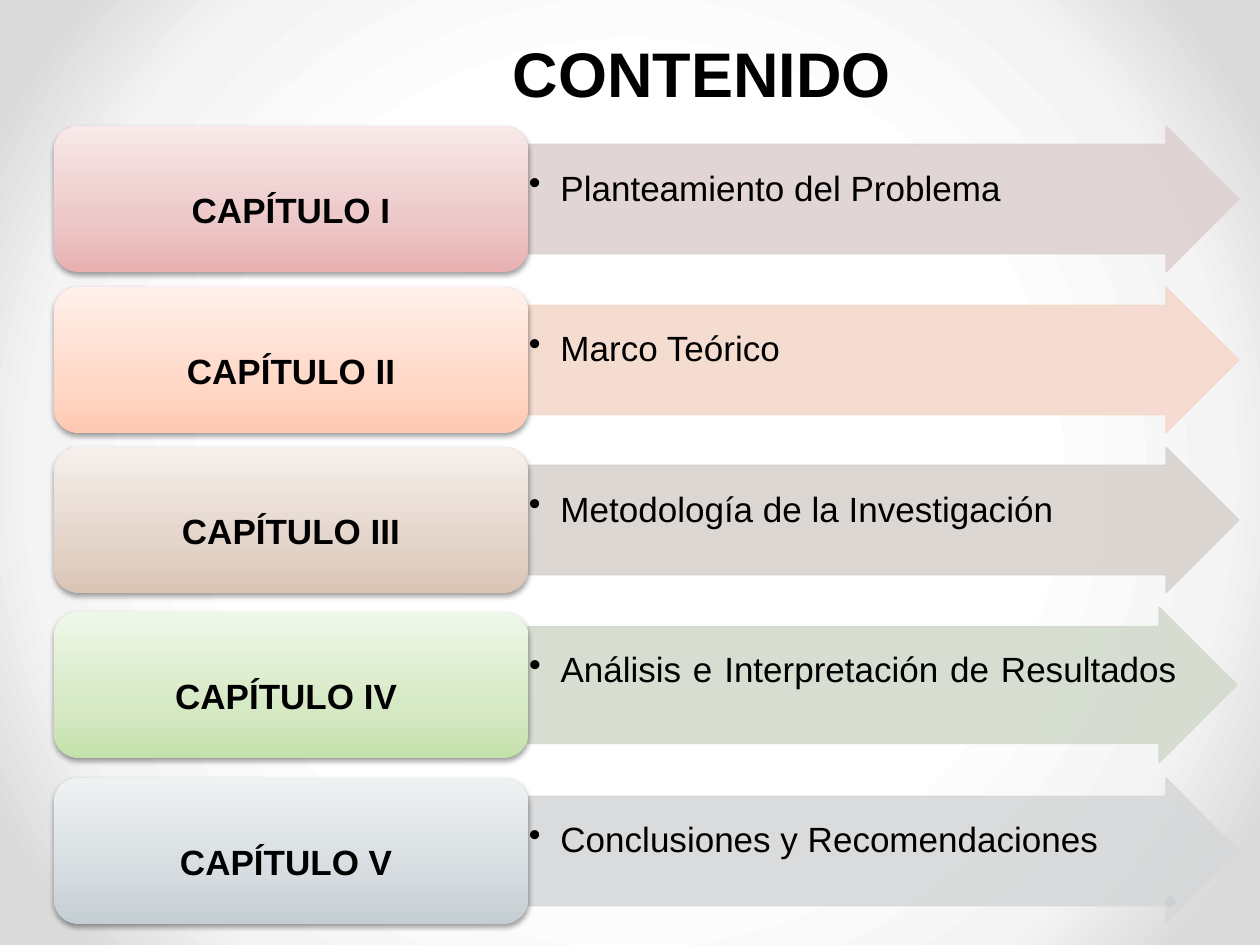
from dataclasses import dataclass

from lxml import etree
from pptx import Presentation
from pptx import util as u
from pptx.dml import color
from pptx.enum import shapes, text
from pptx.oxml import ns

EMU_PER_PX = 914400 / 126
COLORS = {
    "text": "000000", "dot": "808080", "shadow": "000000",
    "center": "FFFFFF", "halo": "F4F4F4", "edge": "DADADA",
    "rose_arrow": "DED1D1", "rose_low": "E8B0B0", "rose_mid": "EDC8C8", "rose_top": "F9E9E9",
    "peach_arrow": "F5D9CD", "peach_low": "FFC9B1", "peach_mid": "FFD8C8", "peach_top": "FFF0EA",
    "sand_arrow": "D9D3CF", "sand_low": "DAC4B4", "sand_mid": "E4D5CB", "sand_top": "F5EFEB",
    "green_arrow": "D3DACD", "green_low": "C5E1AB", "green_mid": "D6E9C5", "green_top": "EFF7E9",
    "slate_arrow": "D6D8D9", "slate_low": "C5CED2", "slate_mid": "D6DCDF", "slate_top": "EFF2F3",
}
CARD_LEFT, CARD_WIDTH, CARD_HEIGHT, CARD_PAD = 54, 474, 146, 7
ARROW_LEFT = 528


@dataclass(frozen=True)
class Chapter:
    label: str
    topic: str
    theme: str
    top: int
    overhang: int = 0
    arrow_width: int = 711


CHAPTERS = [
    Chapter("CAPÍTULO I", "Planteamiento del Problema ", "rose", 126),
    Chapter("CAPÍTULO II", "Marco Teórico ", "peach", 287),
    Chapter("CAPÍTULO III", "Metodología de la Investigación ", "sand", 447),
    Chapter("CAPÍTULO IV ", "Análisis e Interpretación de Resultados ", "green", 612, 5, 709),
    Chapter("CAPÍTULO V ", "Conclusiones y Recomendaciones ", "slate", 778),
]


def px(length: int) -> int:
    return round(length * EMU_PER_PX)


def rgb(name: str) -> color.RGBColor:
    return color.RGBColor.from_string(COLORS[name])


def add_child(parent, tag: str, **attributes):
    return etree.SubElement(parent, ns.qn(tag), attributes)


def set_gradient(fill, owner, stops: list[tuple[int, str]]):
    fill.gradient()
    gradient = owner.find(".//" + ns.qn("a:gradFill"))
    for child in list(gradient):
        gradient.remove(child)
    stop_list = add_child(gradient, "a:gsLst")
    for percent, name in stops:
        stop = add_child(stop_list, "a:gs", pos=str(percent * 1000))
        add_child(stop, "a:srgbClr", val=COLORS[name])
    return gradient


def add_plain_shape(slide, kind, left: int, top: int, width: int, height: int):
    shape = slide.shapes.add_shape(kind, px(left), px(top), px(width), px(height))
    shape.shadow.inherit = False
    shape.line.fill.background()
    return shape


def format_paragraph(paragraph, size: int, bold: bool, align) -> None:
    paragraph.alignment = align
    for run in paragraph.runs:
        run.font.name = "Arial"
        run.font.size = u.Pt(size)
        run.font.bold = bold
        run.font.color.rgb = rgb("text")


def add_label(slide, content: str, left: int, top: int, width: int, height: int,
              pad_x: int, pad_y: int, anchor, align, bold: bool):
    label = slide.shapes.add_textbox(px(left), px(top), px(width), px(height))
    frame = label.text_frame
    frame.word_wrap = True
    frame.vertical_anchor = anchor
    frame.margin_left = frame.margin_right = px(pad_x)
    frame.margin_top = frame.margin_bottom = px(pad_y)
    frame.text = content
    paragraph = frame.paragraphs[0]
    paragraph.line_spacing = 1.5
    format_paragraph(paragraph, 20, bold, align)
    return paragraph


def add_bullet(paragraph) -> None:
    paragraph.level = 1
    properties = paragraph._p.get_or_add_pPr()
    properties.set("marL", str(u.Inches(0.25)))
    properties.set("indent", str(-u.Inches(0.25)))
    add_child(properties, "a:buChar", char="•")


def draw_arrow(slide, chapter: Chapter) -> None:
    top = chapter.top - chapter.overhang
    height = CARD_HEIGHT + 2 * chapter.overhang
    arrow = add_plain_shape(slide, shapes.MSO_SHAPE.RIGHT_ARROW,
                            ARROW_LEFT, top, chapter.arrow_width, height)
    arrow.adjustments[0] = 0.75
    arrow.adjustments[1] = 0.5
    arrow.fill.solid()
    arrow.fill.fore_color.rgb = rgb(f"{chapter.theme}_arrow")
    arrow.line.color.rgb = rgb(f"{chapter.theme}_arrow")
    arrow.line.width = u.Pt(0.75)
    for tint in arrow._element.spPr.iter(ns.qn("a:srgbClr")):
        add_child(tint, "a:alpha", val="90000")
    topic = add_label(slide, chapter.topic, ARROW_LEFT, top + height // 8,
                      chapter.arrow_width - height * 3 // 8 - 1, height * 3 // 4, 1, 1,
                      text.MSO_ANCHOR.TOP, text.PP_ALIGN.JUSTIFY, False)
    add_bullet(topic)


def draw_card(slide, chapter: Chapter) -> None:
    card = add_plain_shape(slide, shapes.MSO_SHAPE.ROUNDED_RECTANGLE,
                           CARD_LEFT, chapter.top, CARD_WIDTH, CARD_HEIGHT)
    properties = card._element.spPr
    stops = [(0, f"{chapter.theme}_low"), (35, f"{chapter.theme}_mid"), (100, f"{chapter.theme}_top")]
    gradient = set_gradient(card.fill, properties, stops)
    add_child(gradient, "a:lin", ang="16200000", scaled="0")
    shadow = add_child(properties.find(ns.qn("a:effectLst")), "a:outerShdw",
                       blurRad="40000", dist="20000", dir="5400000", rotWithShape="0")
    shade = add_child(shadow, "a:srgbClr", val=COLORS["shadow"])
    add_child(shade, "a:alpha", val="38000")
    add_label(slide, chapter.label, CARD_LEFT + CARD_PAD, chapter.top + CARD_PAD,
              CARD_WIDTH - 2 * CARD_PAD, CARD_HEIGHT - 2 * CARD_PAD, 10, 5,
              text.MSO_ANCHOR.MIDDLE, text.PP_ALIGN.CENTER, True)


def draw_background(slide) -> None:
    stops = [(50, "center"), (76, "halo"), (92, "edge")]
    gradient = set_gradient(slide.background.fill, slide.element, stops)
    circle = add_child(gradient, "a:path", path="circle")
    add_child(circle, "a:fillToRect", l="50000", t="50000", r="50000", b="50000")
    dot = add_plain_shape(slide, shapes.MSO_SHAPE.OVAL, 1165, 896, 11, 11)
    dot.fill.solid()
    dot.fill.fore_color.rgb = rgb("dot")


def draw_title(slide) -> None:
    title = slide.shapes.title
    title.left, title.top, title.width, title.height = px(194), px(-14), px(1033), px(130)
    frame = title.text_frame
    frame.text = "CONTENIDO "
    frame.auto_size = text.MSO_AUTO_SIZE.NONE
    frame.vertical_anchor = text.MSO_ANCHOR.BOTTOM
    heading = frame.paragraphs[0]
    heading.line_spacing = u.Pt(58)
    format_paragraph(heading, 36, True, text.PP_ALIGN.CENTER)


def main() -> None:
    presentation = Presentation()
    presentation.slide_width, presentation.slide_height = px(1260), px(945)
    slide = presentation.slides.add_slide(presentation.slide_layouts[5])
    draw_background(slide)
    draw_title(slide)
    for chapter in CHAPTERS:
        draw_arrow(slide, chapter)
        draw_card(slide, chapter)
    presentation.save("out.pptx")


if __name__ == "__main__":
    main()
